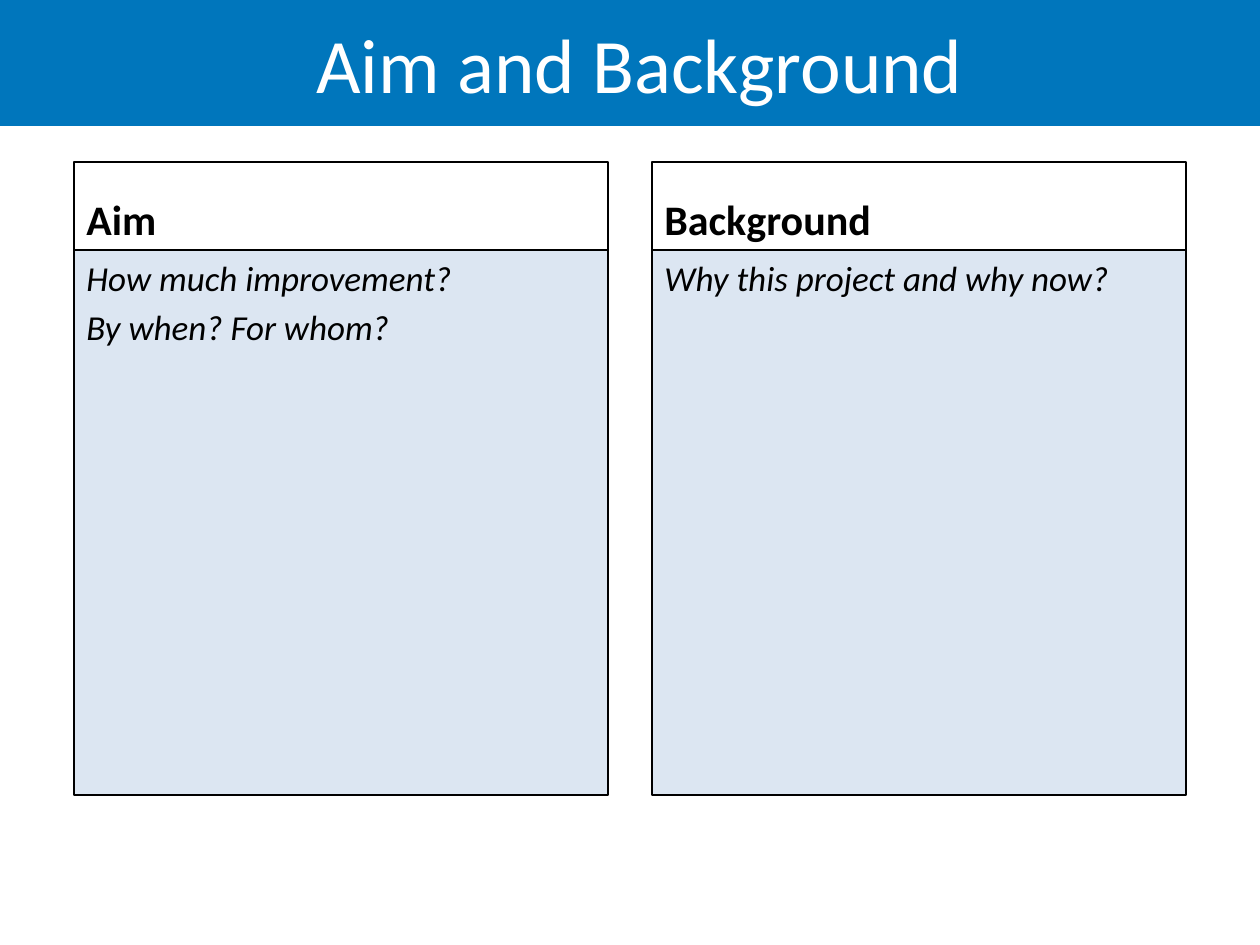
import pptx
import pptx.dml.color
import pptx.enum.shapes
import pptx.enum.text
import pptx.util

ANCHOR = pptx.enum.text.MSO_ANCHOR
ALIGN = pptx.enum.text.PP_ALIGN


def color(value):
    return pptx.dml.color.RGBColor.from_string(value)


def px(length):
    return pptx.util.Emu(round(length * 914400 / 126))


class SlideBuilder:
    """Holds the slide style and adds each kind of element."""

    font = "Calibri"
    blue, pale, black, white = "0076BC", "DCE6F2", "000000", "FFFFFF"

    def __init__(self, slide):
        self.slide = slide

    def set_text(self, frame, lines, size, ink, align, anchor, bold=False, italic=False):
        frame.text = "\n".join(lines)
        frame.word_wrap = True
        frame.vertical_anchor = anchor
        for index, paragraph in enumerate(frame.paragraphs):
            paragraph.alignment = align
            paragraph.space_before = pptx.util.Pt(size * 0.2 if index else 0)
            for run in paragraph.runs:
                run.font.name = self.font
                run.font.size = pptx.util.Pt(size)
                run.font.color.rgb = color(ink)
                run.font.bold = bold
                run.font.italic = italic

    def box(self, left, top, width, height, fill=None, line=None):
        kind = pptx.enum.shapes.MSO_SHAPE.RECTANGLE
        rectangle = self.slide.shapes.add_shape(
            kind, px(left), px(top), px(width), px(height))
        rectangle.shadow.inherit = False
        if fill:
            rectangle.fill.solid()
            rectangle.fill.fore_color.rgb = color(fill)
        else:
            rectangle.fill.background()
        if line:
            rectangle.line.color.rgb = color(line)
            rectangle.line.width = pptx.util.Pt(1)
        else:
            rectangle.line.fill.background()
        return rectangle

    def title(self, text):
        heading = self.slide.shapes.title
        heading.left, heading.top = px(73), px(5)
        heading.width, heading.height = px(1134), px(116)
        self.set_text(heading.text_frame, [text], 44, self.white,
                      ALIGN.CENTER, ANCHOR.MIDDLE)
        banner = self.box(0, 0, 1260, 126, fill=self.blue)
        heading._element.addprevious(banner._element)

    def panel(self, left, heading, prompts):
        top, width, header_height, body_height = 162, 534, 88, 545
        header = self.box(left, top, width, header_height, line=self.black)
        self.set_text(header.text_frame, [heading], 24, self.black,
                      ALIGN.LEFT, ANCHOR.BOTTOM, bold=True)
        body = self.box(left, top + header_height, width, body_height,
                        fill=self.pale, line=self.black)
        self.set_text(body.text_frame, prompts, 20, self.black,
                      ALIGN.LEFT, ANCHOR.TOP, italic=True)


def main():
    presentation = pptx.Presentation()
    presentation.slide_width, presentation.slide_height = px(1260), px(945)
    builder = SlideBuilder(presentation.slides.add_slide(presentation.slide_layouts[5]))
    builder.title("Aim and Background")
    panels = [
        ("Aim", ["How much improvement?", "By when? For whom?"]),
        ("Background", ["Why this project and why now?"]),
    ]
    for column, (heading, prompts) in enumerate(panels):
        builder.panel(74 + column * 578, heading, prompts)
    presentation.save("out.pptx")


if __name__ == "__main__":
    main()
